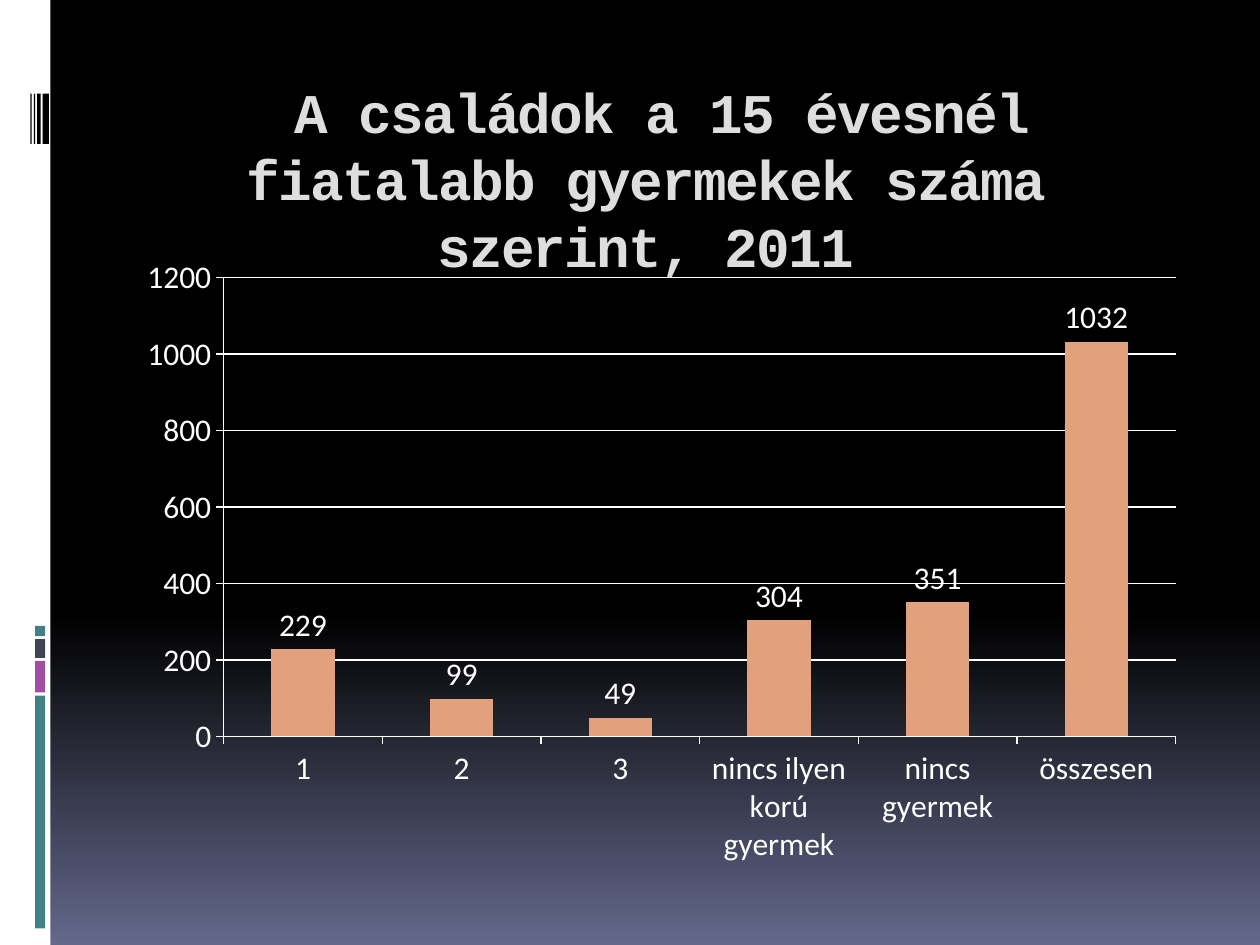
from copy import deepcopy

from pptx import Presentation
from pptx.chart.data import CategoryChartData
from pptx.dml.color import RGBColor
from pptx.enum.chart import XL_CHART_TYPE, XL_LABEL_POSITION, XL_TICK_MARK
from pptx.enum.shapes import MSO_SHAPE
from pptx.enum.text import MSO_ANCHOR, PP_ALIGN
from pptx.oxml.ns import qn
from pptx.util import Pt

RECTANGLE = MSO_SHAPE.RECTANGLE
COLUMNS = XL_CHART_TYPE.COLUMN_CLUSTERED
LABEL_ABOVE = XL_LABEL_POSITION.OUTSIDE_END
TICK_OUTSIDE = XL_TICK_MARK.OUTSIDE
TOP = MSO_ANCHOR.TOP
CENTER = PP_ALIGN.CENTER

BLACK = RGBColor(0x00, 0x00, 0x00)
WHITE = RGBColor(0xFF, 0xFF, 0xFF)
DUSK = RGBColor(0x64, 0x68, 0x8B)
TEAL = RGBColor(0x43, 0x80, 0x86)
PURPLE = RGBColor(0xA0, 0x4D, 0xA3)
SLATE = RGBColor(0x42, 0x44, 0x56)
TITLE_GREY = RGBColor(0xDE, 0xDE, 0xDE)
PEACH = RGBColor(0xE1, 0xA1, 0x7C)

TITLE = "A családok a 15 évesnél fiatalabb gyermekek száma  szerint, 2011 "
FAMILIES = {
    "1": 229,
    "2": 99,
    "3": 49,
    "nincs ilyen korú gyermek": 304,
    "nincs gyermek": 351,
    "összesen": 1032,
}


def paint_background(slide):
    fill = slide.background.fill
    fill.gradient()
    fill.gradient_angle = 270
    stop_list = next(slide.element.iter(qn("a:gsLst")))
    stop_list.append(deepcopy(stop_list[-1]))
    stops = ((0, BLACK), (0.65, BLACK), (1, DUSK))
    for stop, (position, color) in zip(fill.gradient_stops, stops):
        stop.position = position
        stop.color.rgb = color


def add_bar(slide, left, top, width, height, color):
    bar = slide.shapes.add_shape(RECTANGLE, Pt(left), Pt(top), Pt(width), Pt(height))
    bar.shadow.inherit = False
    bar.fill.solid()
    bar.fill.fore_color.rgb = color
    bar.line.fill.background()


def add_title(slide):
    box = slide.shapes.add_textbox(Pt(72), Pt(40.5), Pt(612), Pt(72))
    frame = box.text_frame
    frame.word_wrap = True
    frame.vertical_anchor = TOP
    heading = frame.paragraphs[0]
    heading.alignment = CENTER
    run = heading.add_run()
    run.text = TITLE
    font = run.font
    font.name = "Courier New"
    font.size = Pt(32)
    font.bold = True
    font.color.rgb = TITLE_GREY
    # Letter spacing of -1 pt
    font._element.set("spc", "-100")


def style_line(line):
    line.color.rgb = WHITE
    line.width = Pt(0.75)


def add_family_chart(slide):
    data = CategoryChartData()
    data.categories = list(FAMILIES)
    data.add_series("Series 1", list(FAMILIES.values()))
    chart = slide.shapes.add_chart(
        COLUMNS, Pt(72), Pt(140.5), Pt(612), Pt(360), data
    ).chart
    chart.has_legend = False
    chart.has_title = False
    chart.font.name = "Calibri"
    chart.font.size = Pt(18)
    chart.font.color.rgb = WHITE

    # Axes
    for axis in (chart.category_axis, chart.value_axis):
        axis.major_tick_mark = TICK_OUTSIDE
        style_line(axis.format.line)
    values = chart.value_axis
    values.minimum_scale, values.maximum_scale, values.major_unit = 0, 1200, 200
    values.has_major_gridlines = True
    style_line(values.major_gridlines.format.line)

    # Columns and their labels
    plot = chart.plots[0]
    plot.gap_width = 150
    plot.vary_by_categories = False
    families = plot.series[0]
    families.format.fill.solid()
    families.format.fill.fore_color.rgb = PEACH
    labels = families.data_labels
    labels.show_value = True
    labels.position = LABEL_ABOVE


def main():
    deck = Presentation()
    deck.slide_width, deck.slide_height = Pt(720), Pt(540)
    slide = deck.slides.add_slide(deck.slide_layouts[6])
    paint_background(slide)

    # White side strip
    add_bar(slide, 0, 0, 28.8, 540, WHITE)

    # Coloured blocks at the foot of the strip
    for top, height, color in (
        (397.6, 133, TEAL),
        (377.7, 18, PURPLE),
        (365.2, 10.8, SLATE),
        (357.7, 5.8, TEAL),
    ):
        add_bar(slide, 20, top, 5.8, height, color)

    # Black stripes near the top of the strip
    for left, width in ((24.4, 3.6), (21.2, 2), (19.4, 0.7), (17.4, 0.7)):
        add_bar(slide, left, 53.5, width, 28.8, BLACK)

    add_title(slide)
    add_family_chart(slide)
    deck.save("out.pptx")


if __name__ == "__main__":
    main()
